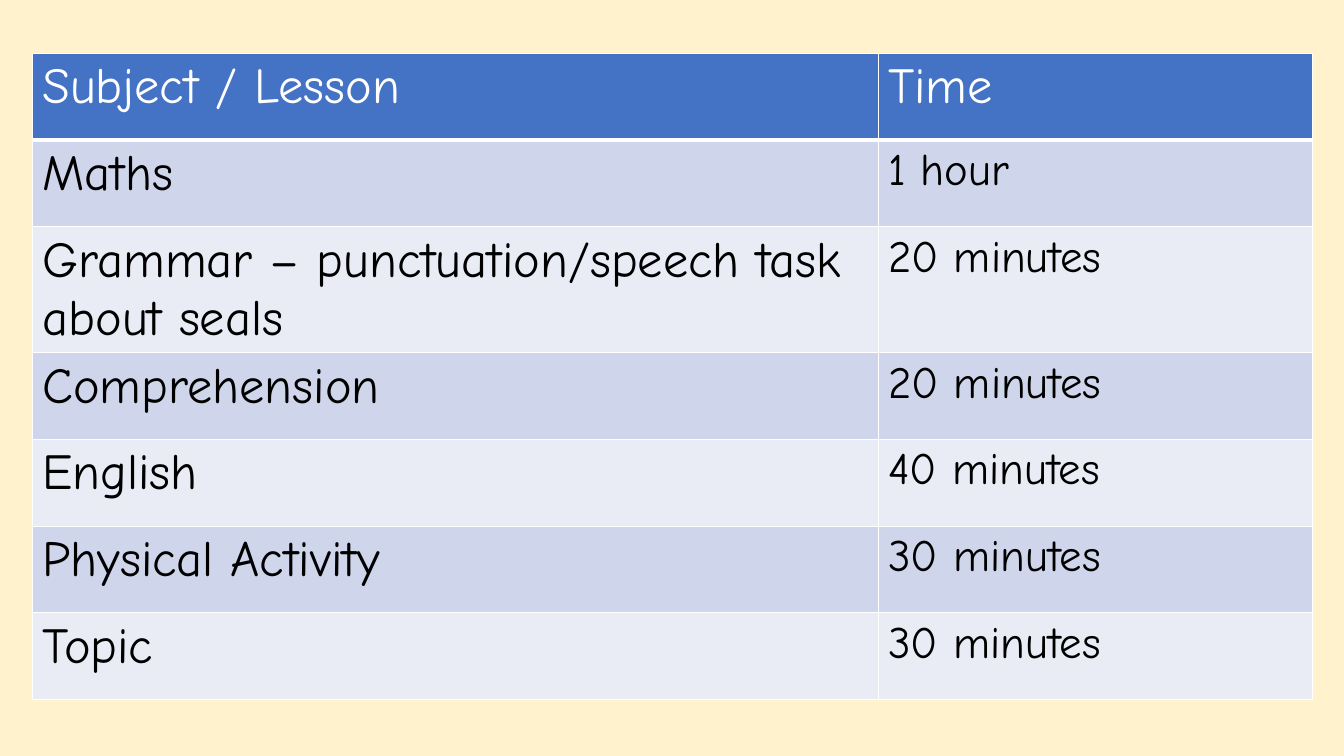
"""Build a slide with a timetable of lessons and their lengths."""
from lxml.etree import SubElement
from pptx import Presentation
from pptx.dml.color import RGBColor
from pptx.oxml.ns import qn
from pptx.util import Inches, Pt

CREAM = RGBColor(0xFF, 0xF2, 0xCC)
BLUE = RGBColor(0x44, 0x72, 0xC4)
BAND_DARK = RGBColor(0xCF, 0xD5, 0xEA)
BAND_LIGHT = RGBColor(0xE9, 0xEB, 0xF5)
WHITE = RGBColor(0xFF, 0xFF, 0xFF)
BLACK = RGBColor(0x00, 0x00, 0x00)
FONT = "Comic Neue"

TIMETABLE = [
    ("Subject / Lesson", "Time"),
    ("Maths", "1 hour"),
    ("Grammar – punctuation/speech task about seals", "20 minutes"),
    ("Comprehension", "20 minutes"),
    ("English", "40 minutes"),
    ("Physical Activity", "30 minutes"),
    ("Topic", "30 minutes"),
]
COL_WIDTHS = (8.39, 4.31)
ROW_HEIGHT = 0.86


def add_borders(cell, bottom_width):
    """Draw white lines on the four sides of a cell."""
    tcPr = cell._tc.get_or_add_tcPr()
    for side, width in (("L", 1), ("R", 1), ("T", 1), ("B", bottom_width)):
        ln = SubElement(tcPr, qn(f"a:ln{side}"), w=str(Pt(width)))
        fill = SubElement(ln, qn("a:solidFill"))
        SubElement(fill, qn("a:srgbClr"), val=str(WHITE))


prs = Presentation()
prs.slide_width = Inches(13.33)
prs.slide_height = Inches(7.5)
s = prs.slides.add_slide(prs.slide_layouts[6])
s.background.fill.solid()
s.background.fill.fore_color.rgb = CREAM

table = s.shapes.add_table(
    len(TIMETABLE), len(COL_WIDTHS), Inches(0.32), Inches(0.53),
    Inches(sum(COL_WIDTHS)), Inches(ROW_HEIGHT * len(TIMETABLE)),
).table
for column, width in zip(table.columns, COL_WIDTHS):
    column.width = Inches(width)

for i, row in enumerate(TIMETABLE):
    table.rows[i].height = Inches(ROW_HEIGHT)
    header = i == 0
    band = BAND_DARK if i % 2 else BAND_LIGHT
    for j, text in enumerate(row):
        cell = table.cell(i, j)
        add_borders(cell, 3 if header else 1)
        cell.fill.solid()
        cell.fill.fore_color.rgb = BLUE if header else band
        p = cell.text_frame.paragraphs[0]
        p.text = text
        p.font.name = FONT
        p.font.size = Pt(36 if header or j == 0 else 32)
        p.font.bold = False
        p.font.color.rgb = WHITE if header else BLACK

prs.save("out.pptx")
